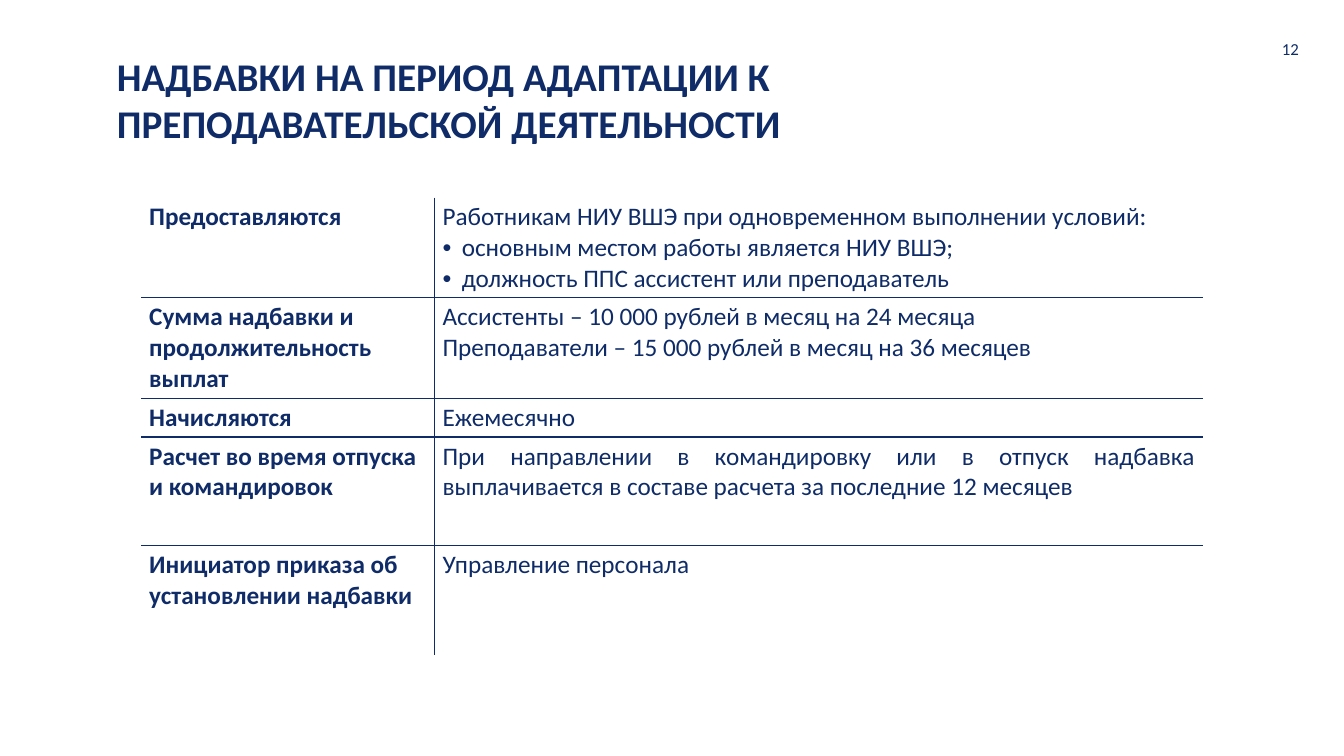
from dataclasses import dataclass

from lxml import etree
from pptx import Presentation
from pptx.dml.color import RGBColor
from pptx.enum import text
from pptx.oxml import ns
from pptx.util import Inches, Pt


@dataclass(frozen=True)
class Theme:
    font: str = "Calibri"
    navy: str = "0F2C68"
    title: int = 28
    body: int = 18
    number: int = 12
    line: int = 1


THEME = Theme()
LEFT, RIGHT, JUSTIFY = text.PP_ALIGN.LEFT, text.PP_ALIGN.RIGHT, text.PP_ALIGN.JUSTIFY
NO_GRID_STYLE = "{2D5ABB26-0587-4C30-8999-92F81FD0307C}"
BULLET = "• "
COLUMNS = (2.91, 7.62)

# label, lines of the explanation, row height
ROWS = [
    ("Предоставляются",
     ["Работникам НИУ ВШЭ при одновременном выполнении условий:",
      "• основным местом работы является НИУ ВШЭ;",
      "• должность ППС ассистент или преподаватель"], 0.92),
    ("Сумма надбавки и продолжительность выплат",
     ["Ассистенты – 10 000 рублей в месяц на 24 месяца",
      "Преподаватели – 15 000 рублей в месяц на 36 месяцев"], 0.92),
    ("Начисляются", ["Ежемесячно"], 0.36),
    ("Расчет во время отпуска и командировок",
     ["При направлении в командировку или в отпуск надбавка "
      "выплачивается в составе расчета за последние 12 месяцев"], 1.08),
    ("Инициатор приказа об установлении надбавки", ["Управление персонала"], 1.08),
]


def add_bullet(p, indent=0.19):
    pPr = p._p.get_or_add_pPr()
    pPr.set("marL", str(Inches(indent)))
    pPr.set("indent", str(-Inches(indent)))
    etree.SubElement(pPr, ns.qn("a:buFont"), typeface="Arial")
    etree.SubElement(pPr, ns.qn("a:buChar"), char=BULLET.strip())


def write(tf, lines, size=THEME.body, bold=False, align=LEFT,
          anchor=text.MSO_ANCHOR.TOP):
    """Fill a text frame; a line that opens with the bullet mark becomes a list item."""
    tf.word_wrap = True
    tf.vertical_anchor = anchor
    for i, line in enumerate(lines):
        p = tf.paragraphs[0] if i == 0 else tf.add_paragraph()
        p.alignment = align
        if line.startswith(BULLET):
            add_bullet(p)
        r = p.add_run()
        r.text = line.removeprefix(BULLET)
        r.font.name, r.font.size, r.font.bold = THEME.font, Pt(size), bold
        r.font.color.rgb = RGBColor.from_string(THEME.navy)


def set_borders(cell, visible):
    """Draw the sides named in visible (letters of LRTB) and hide the others."""
    tcPr = cell._tc.get_or_add_tcPr()
    for side in "LRTB":
        ln = etree.SubElement(tcPr, ns.qn(f"a:ln{side}"), w=str(Pt(THEME.line)))
        if side in visible:
            fill = etree.SubElement(ln, ns.qn("a:solidFill"))
            etree.SubElement(fill, ns.qn("a:srgbClr"), val=THEME.navy)
        else:
            etree.SubElement(ln, ns.qn("a:noFill"))


def add_title(s, title):
    sp = s.shapes.title
    sp.left, sp.top, sp.width, sp.height = map(Inches, (1.13, 0.49, 8.89, 0.46))
    tf = sp.text_frame
    tf.auto_size = text.MSO_AUTO_SIZE.NONE
    tf.margin_left = tf.margin_right = tf.margin_top = tf.margin_bottom = Inches(0.03)
    write(tf, [title], size=THEME.title, bold=True)


def add_page_number(s, number):
    sp = s.shapes.add_textbox(*map(Inches, (12.26, 0.23, 0.72, 0.5)))
    write(sp.text_frame, [number], size=THEME.number, align=RIGHT,
          anchor=text.MSO_ANCHOR.MIDDLE)


def add_allowance_table(s):
    height = sum(row[2] for row in ROWS)
    frame = s.shapes.add_table(len(ROWS), len(COLUMNS),
                               *map(Inches, (1.4, 1.96, sum(COLUMNS), height)))
    table = frame.table
    table.first_row = table.horz_banding = False
    table._tbl.tblPr.find(ns.qn("a:tableStyleId")).text = NO_GRID_STYLE
    for column, width in zip(table.columns, COLUMNS):
        column.width = Inches(width)
    for i, (label, lines, row_height) in enumerate(ROWS):
        table.rows[i].height = Inches(row_height)
        rules = ("T" if i > 0 else "") + ("B" if i < len(ROWS) - 1 else "")
        label_cell, detail_cell = table.rows[i].cells
        for cell, inner_side in ((label_cell, "R"), (detail_cell, "L")):
            cell.margin_left = cell.margin_right = Inches(0.08)
            cell.margin_top = cell.margin_bottom = Inches(0.04)
            set_borders(cell, inner_side + rules)
            cell.fill.background()
        write(label_cell.text_frame, [label], bold=True)
        write(detail_cell.text_frame, lines, align=JUSTIFY)


def main():
    prs = Presentation()
    prs.slide_width, prs.slide_height = Inches(13.33), Inches(7.5)
    s = prs.slides.add_slide(prs.slide_layouts.get_by_name("Title Only"))
    add_allowance_table(s)
    add_page_number(s, "12")
    add_title(s, "НАДБАВКИ НА ПЕРИОД АДАПТАЦИИ К ПРЕПОДАВАТЕЛЬСКОЙ ДЕЯТЕЛЬНОСТИ")
    prs.save("out.pptx")


if __name__ == "__main__":
    main()
